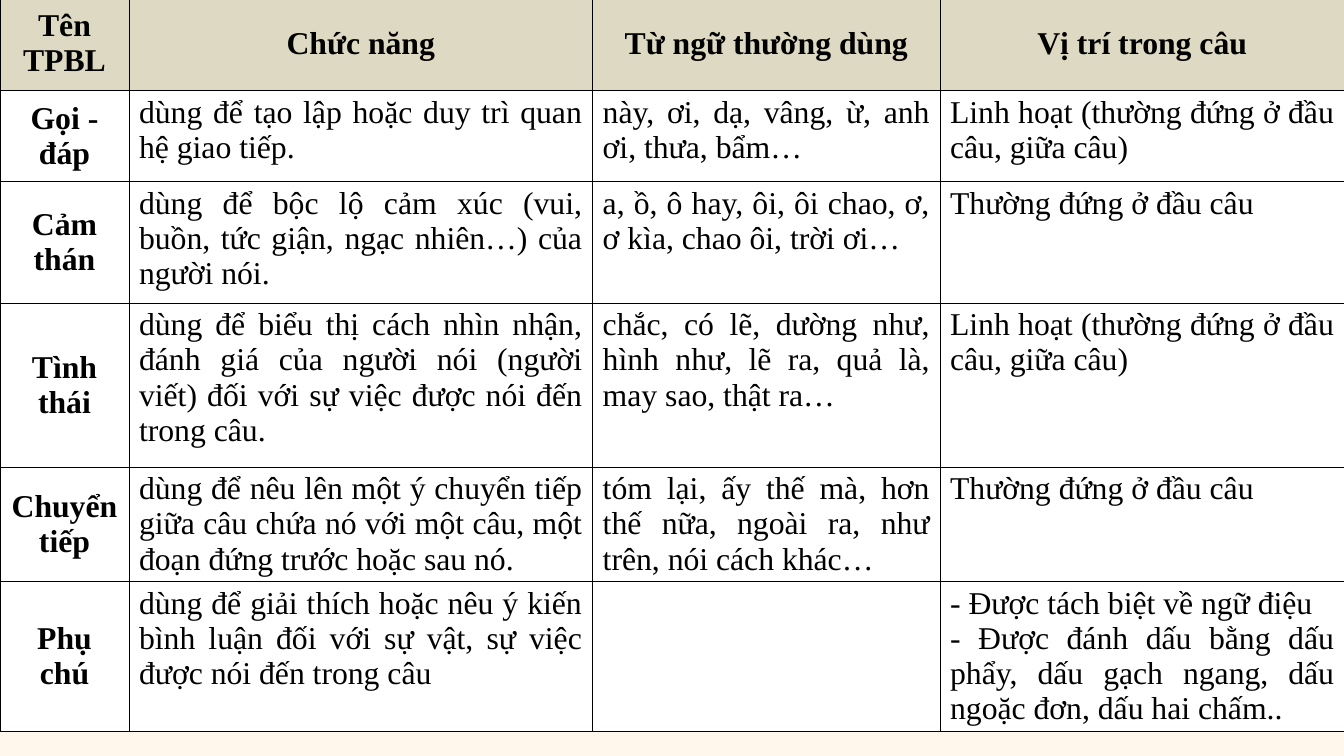
from dataclasses import dataclass

from lxml.etree import SubElement
from pptx import Presentation
from pptx.dml.color import RGBColor
from pptx.enum.text import MSO_ANCHOR, PP_ALIGN
from pptx.oxml.ns import qn
from pptx.util import Pt

FONT = "Times New Roman"
SIZE = 34
COLS = [138.2, 496.8, 372.2, 433.4]
ROWS = [100.8, 97.2, 130.3, 175.7, 82.1, 82.1]
INK, HEAD, BODY, PAGE = "000000", "DDD9C3", "FFFFFF", "FFF7EC"


@dataclass
class Part:
    name: str
    role: str
    words: str
    place: str


FLEX = "Linh hoạt (thường đứng ở đầu câu, giữa câu)"
START = "Thường đứng ở đầu câu"
PARTS = [
    Part("Tên TPBL", "Chức năng", "Từ ngữ thường dùng", "Vị trí trong câu"),
    Part("Gọi - đáp", "dùng để tạo lập hoặc duy trì quan hệ giao tiếp.",
         "này, ơi, dạ, vâng, ừ, anh ơi, thưa, bẩm…", FLEX),
    Part("Cảm thán",
         "dùng để bộc lộ cảm xúc (vui, buồn, tức giận, ngạc nhiên…) của người nói.",
         "a, ồ, ô hay, ôi, ôi chao, ơ, ơ kìa, chao ôi, trời ơi…", START),
    Part("Tình thái",
         "dùng để biểu thị cách nhìn nhận, đánh giá của người nói (người viết) "
         "đối với sự việc được nói đến trong câu.",
         "chắc, có lẽ, dường như, hình như, lẽ ra, quả là, may sao, thật ra…", FLEX),
    Part("Chuyển tiếp",
         "dùng để nêu lên một ý chuyển tiếp giữa câu chứa nó với một câu, "
         "một đoạn đứng trước hoặc sau nó.",
         "tóm lại, ấy thế mà, hơn thế nữa, ngoài ra, như trên, nói cách khác…", START),
    Part("Phụ chú",
         "dùng để giải thích hoặc nêu ý kiến bình luận đối với sự vật, "
         "sự việc được nói đến trong câu",
         "",
         "- Được tách biệt về ngữ điệu\n"
         "- Được đánh dấu bằng dấu phẩy, dấu gạch ngang, dấu ngoặc đơn, dấu hai chấm.."),
]


def paint(fill, tone: str) -> None:
    fill.solid()
    fill.fore_color.rgb = RGBColor.from_string(tone)


def edge(cell) -> None:
    """Draw a thin line on all four sides; must run before the cell is filled."""
    props = cell._tc.get_or_add_tcPr()
    for side in ("a:lnL", "a:lnR", "a:lnT", "a:lnB"):
        line = SubElement(props, qn(side), w=str(Pt(1)))
        fill = SubElement(line, qn("a:solidFill"))
        SubElement(fill, qn("a:srgbClr"), val=INK)


def write(cell, text: str, label: bool, gap: float) -> None:
    cell.margin_left = cell.margin_right = Pt(10.8)
    cell.margin_top = cell.margin_bottom = Pt(5)
    cell.vertical_anchor = MSO_ANCHOR.MIDDLE if label else MSO_ANCHOR.TOP
    cell.text_frame.text = text
    for para in cell.text_frame.paragraphs:
        para.alignment = PP_ALIGN.CENTER if label else PP_ALIGN.JUSTIFY
        if gap:
            para.space_after = Pt(gap)
        for run in para.runs:
            run.font.name = FONT
            run.font.size = Pt(SIZE)
            run.font.bold = label
            paint(run.font.fill, INK)


def main() -> None:
    deck = Presentation()
    deck.slide_width, deck.slide_height = Pt(1440), Pt(810)
    slide = deck.slides.add_slide(deck.slide_layouts[6])
    paint(slide.background.fill, PAGE)

    high = Pt(813.6)
    frame = slide.shapes.add_table(len(ROWS), len(COLS), 0, Pt(-3.6), Pt(1440), high)
    table = frame.table
    for col, wide in zip(table.columns, COLS):
        col.width = Pt(wide)
    for row, tall in zip(table.rows, ROWS):
        row.height = Pt(tall)
    frame.height = high

    for r, part in enumerate(PARTS):
        for c, text in enumerate((part.name, part.role, part.words, part.place)):
            cell = table.cell(r, c)
            edge(cell)
            paint(cell.fill, BODY if r else HEAD)
            write(cell, text, label=r == 0 or c == 0, gap=11.2 if r and c == 1 else 0)

    deck.save("out.pptx")


if __name__ == "__main__":
    main()
